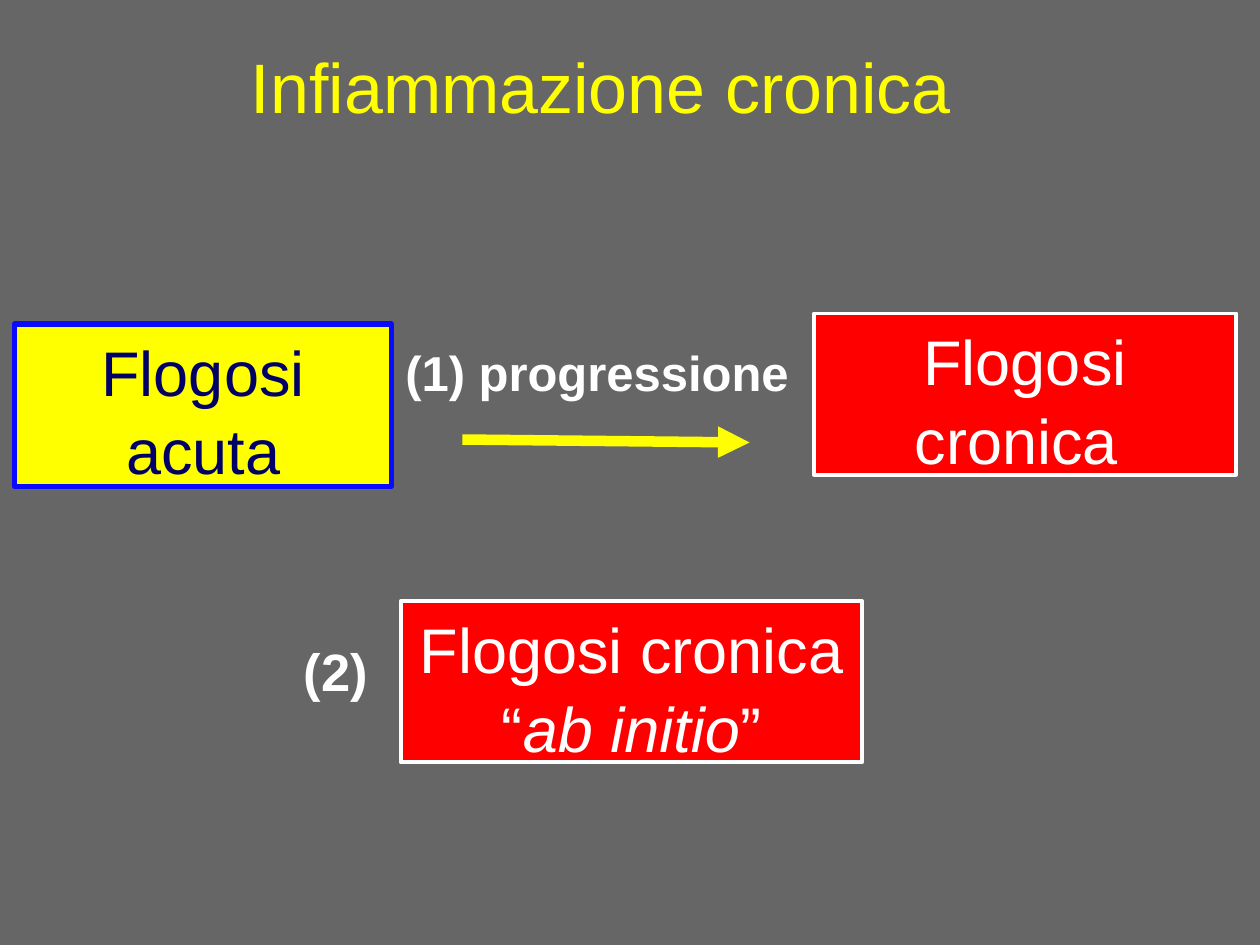
import dataclasses

import lxml.etree
import pptx
import pptx.dml.color
import pptx.enum.shapes
import pptx.enum.text
import pptx.oxml.ns
import pptx.util

Cm = pptx.util.Cm
Pt = pptx.util.Pt
ANCHOR = pptx.enum.text.MSO_ANCHOR
ALIGN = pptx.enum.text.PP_ALIGN
AUTO_SIZE = pptx.enum.text.MSO_AUTO_SIZE


@dataclasses.dataclass(frozen=True)
class Theme:
    font: str = "Arial"
    background: str = "666666"
    accent: str = "FFFF00"
    acute_text: str = "000066"
    acute_line: str = "0A0AFF"
    chronic: str = "FF0000"
    light: str = "FFFFFF"
    title_size: int = 40
    box_size: int = 36
    number_size: int = 30
    label_size: int = 28
    acute_width: float = 3
    chronic_width: float = 2.25
    arrow_width: float = 6
    line_spacing: float = 1.04
    inset: float = 0.13


def rgb(value):
    return pptx.dml.color.RGBColor.from_string(value)


def apply(target, values):
    for name, value in values.items():
        setattr(target, name, value)


class InflammationSlide:
    """Draws the elements of one slide in a shared theme."""

    def __init__(self, deck, theme):
        self.theme = theme
        self.slide = deck.slides.add_slide(deck.slide_layouts[5])
        fill = self.slide.background.fill
        fill.solid()
        fill.fore_color.rgb = rgb(theme.background)

    def set_text(self, shape, runs, size, color, bold=False, spacing=None,
                 align=ALIGN.CENTER, anchor=ANCHOR.TOP, wrap=True):
        frame = shape.text_frame
        margins = ("margin_left", "margin_top", "margin_right", "margin_bottom")
        apply(frame, dict.fromkeys(margins, Cm(self.theme.inset)))
        apply(frame, {"word_wrap": wrap, "vertical_anchor": anchor,
                      "auto_size": AUTO_SIZE.NONE})
        paragraph = frame.paragraphs[0]
        apply(paragraph, {"alignment": align, "line_spacing": spacing})
        for text, italic in runs:
            run = paragraph.add_run()
            run.text = text
            apply(run.font, {"name": self.theme.font, "size": Pt(size),
                             "bold": bold, "italic": italic})
            run.font.color.rgb = rgb(color)

    def title(self, text, place):
        heading = self.slide.shapes.title
        apply(heading, dict(zip(("left", "top", "width", "height"), map(Cm, place))))
        self.set_text(heading, [(text, False)], self.theme.title_size,
                      self.theme.accent, anchor=ANCHOR.MIDDLE)

    def box(self, runs, place, fill, line, width, color, parent=None):
        shapes = (parent or self.slide).shapes
        box = shapes.add_shape(pptx.enum.shapes.MSO_SHAPE.RECTANGLE, *map(Cm, place))
        box.shadow.inherit = False
        box.fill.solid()
        box.fill.fore_color.rgb = rgb(fill)
        box.line.color.rgb = rgb(line)
        box.line.width = Pt(width)
        self.set_text(box, runs, self.theme.box_size, color,
                      spacing=self.theme.line_spacing)

    def chronic_box(self, runs, place, parent=None):
        theme = self.theme
        self.box(runs, place, theme.chronic, theme.light, theme.chronic_width,
                 theme.light, parent)

    def label(self, text, place, size, parent=None, **layout):
        label = (parent or self.slide).shapes.add_textbox(*map(Cm, place))
        self.set_text(label, [(text, False)], size, self.theme.light, bold=True,
                      spacing=self.theme.line_spacing, **layout)

    def arrow(self, *ends):
        arrow = self.slide.shapes.add_connector(
            pptx.enum.shapes.MSO_CONNECTOR.STRAIGHT, *map(Cm, ends))
        arrow.line.color.rgb = rgb(self.theme.accent)
        arrow.line.width = Pt(self.theme.arrow_width)
        qn = pptx.oxml.ns.qn
        properties = arrow._element.spPr
        lxml.etree.SubElement(properties.find(qn("a:ln")), qn("a:tailEnd"),
                              type="triangle")
        lxml.etree.SubElement(properties, qn("a:effectLst"))

    def group(self):
        return self.slide.shapes.add_group_shape()


def main():
    deck = pptx.Presentation()
    apply(deck, {"slide_width": Cm(25.4), "slide_height": Cm(19.05)})
    theme = Theme()
    page = InflammationSlide(deck, theme)

    page.title("Infiammazione cronica", (1.3, 0.13, 21.62, 3.18))
    page.box([("Flogosi acuta", False)], (0.3, 6.53, 7.59, 3.28), theme.accent,
             theme.acute_line, theme.acute_width, theme.acute_text)
    page.arrow(9.32, 8.86, 15.11, 8.92)
    page.label("(1) progressione", (7.82, 6.73, 8.43, 1.35), theme.label_size)
    page.chronic_box([("Flogosi cronica ", False)], (16.41, 6.32, 8.51, 3.25))

    ab_initio = page.group()
    page.chronic_box([("Flogosi cronica “", False), ("ab initio", True), ("”", False)],
                     (8.08, 12.12, 9.3, 3.25), ab_initio)
    page.label("(2)", (5.99, 12.7, 1.57, 1.42), theme.number_size, ab_initio,
               align=ALIGN.LEFT, wrap=False)

    deck.save("out.pptx")


if __name__ == "__main__":
    main()
